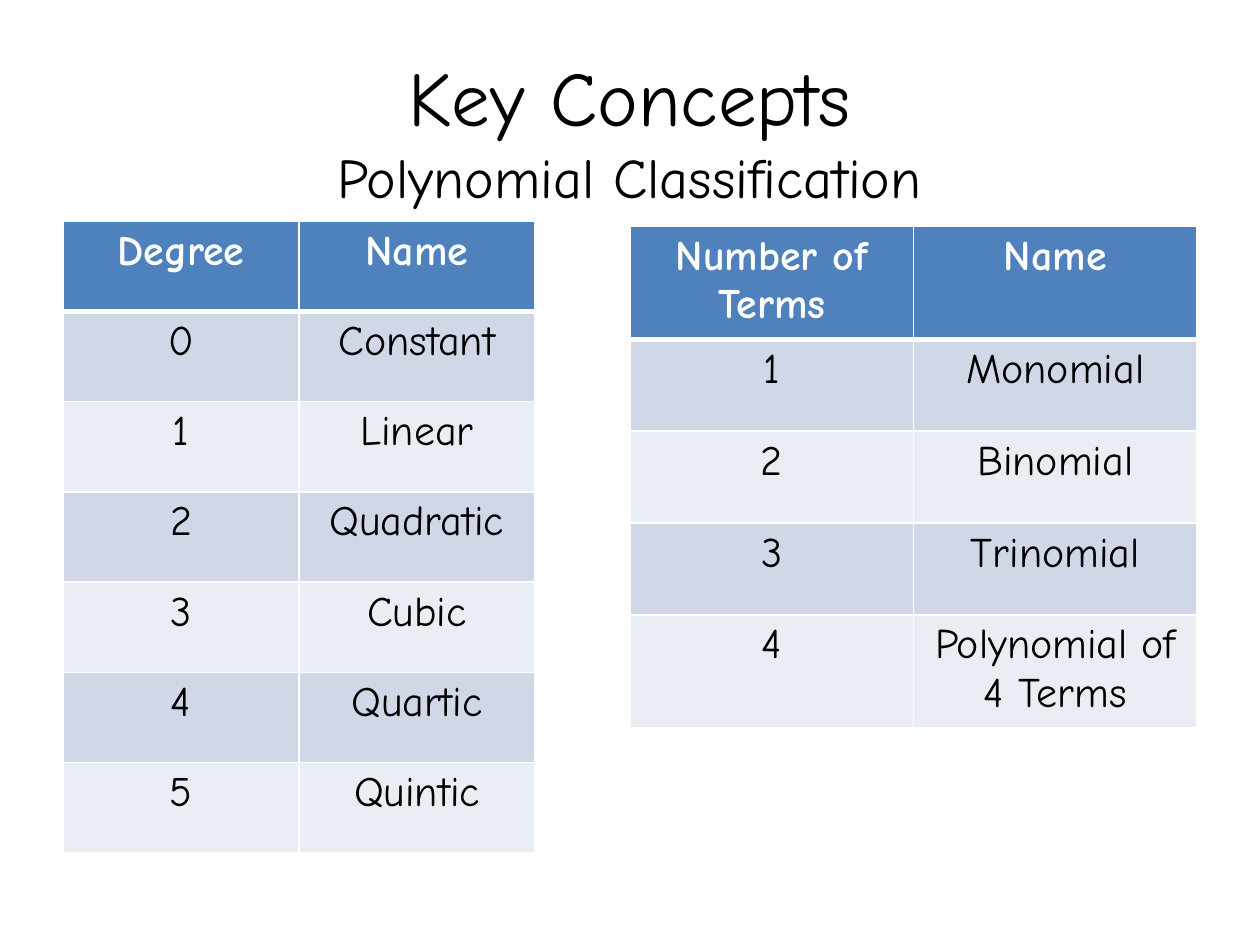
from lxml.etree import SubElement
from pptx import Presentation
from pptx.dml.color import RGBColor
from pptx.enum.text import MSO_ANCHOR as Anchor, PP_ALIGN as Align
from pptx.oxml.ns import qn
from pptx.util import Pt

PX = 914400 / 126
FONT = "Comic Neue"
COLORS = {
    "text": "000000",
    "header_text": "FFFFFF",
    "header": "4F81BD",
    "odd_row": "D0D8E8",
    "even_row": "E9EDF4",
    "border": "FFFFFF",
}
DEGREES = [
    ("Degree", "Name"),
    ("0", "Constant"),
    ("1", "Linear"),
    ("2", "Quadratic"),
    ("3", "Cubic"),
    ("4", "Quartic"),
    ("5", "Quintic"),
]
TERMS = [
    ("Number of Terms", "Name"),
    ("1", "Monomial"),
    ("2", "Binomial"),
    ("3", "Trinomial"),
    ("4", "Polynomial of 4 Terms"),
]


def px(length):
    return round(length * PX)


def write(paragraph, text, size=24, color="text", bold=False):
    paragraph.alignment = Align.CENTER
    run = paragraph.add_run()
    run.text = text
    run.font.name = FONT
    run.font.size = Pt(size)
    run.font.bold = bold
    run.font.color.rgb = RGBColor.from_string(COLORS[color])


def add_borders(cell, top, bottom):
    """Draw the four cell borders; must run before the cell gets its fill."""
    properties = cell._tc.get_or_add_tcPr()
    for side, width in (("L", 1), ("R", 1), ("T", top), ("B", bottom)):
        line = SubElement(properties, qn(f"a:ln{side}"), w=str(Pt(width)))
        fill = SubElement(line, qn("a:solidFill"))
        SubElement(fill, qn("a:srgbClr"), val=COLORS["border"])


def add_heading(slide, left, top, width, height):
    frame = slide.shapes.add_textbox(*map(px, (left, top, width, height))).text_frame
    frame.word_wrap = True
    frame.vertical_anchor = Anchor.MIDDLE
    heading = frame.paragraphs[0]
    write(heading, "Key Concepts", size=44)
    heading.add_line_break()
    write(heading, "Polynomial Classification", size=32)


def add_classification(slide, records, left, top, width, height):
    table = slide.shapes.add_table(
        len(records), len(records[0]), *map(px, (left, top, width, height))
    ).table
    for row, record in enumerate(records):
        is_header = row == 0
        band = "header" if is_header else "odd_row" if row % 2 else "even_row"
        for column, text in enumerate(record):
            cell = table.cell(row, column)
            add_borders(cell, top=3 if row == 1 else 1, bottom=3 if is_header else 1)
            cell.fill.solid()
            cell.fill.fore_color.rgb = RGBColor.from_string(COLORS[band])
            write(
                cell.text_frame.paragraphs[0],
                text,
                color="header_text" if is_header else "text",
                bold=is_header,
            )


def main():
    deck = Presentation()
    deck.slide_width, deck.slide_height = px(1260), px(945)
    slide = deck.slides.add_slide(deck.slide_layouts[6])
    add_heading(slide, 63, 38, 1134, 183)
    add_classification(slide, DEGREES, 63, 221, 472, 632)
    add_classification(slide, TERMS, 630, 226, 567, 459)
    deck.save("out.pptx")


if __name__ == "__main__":
    main()
